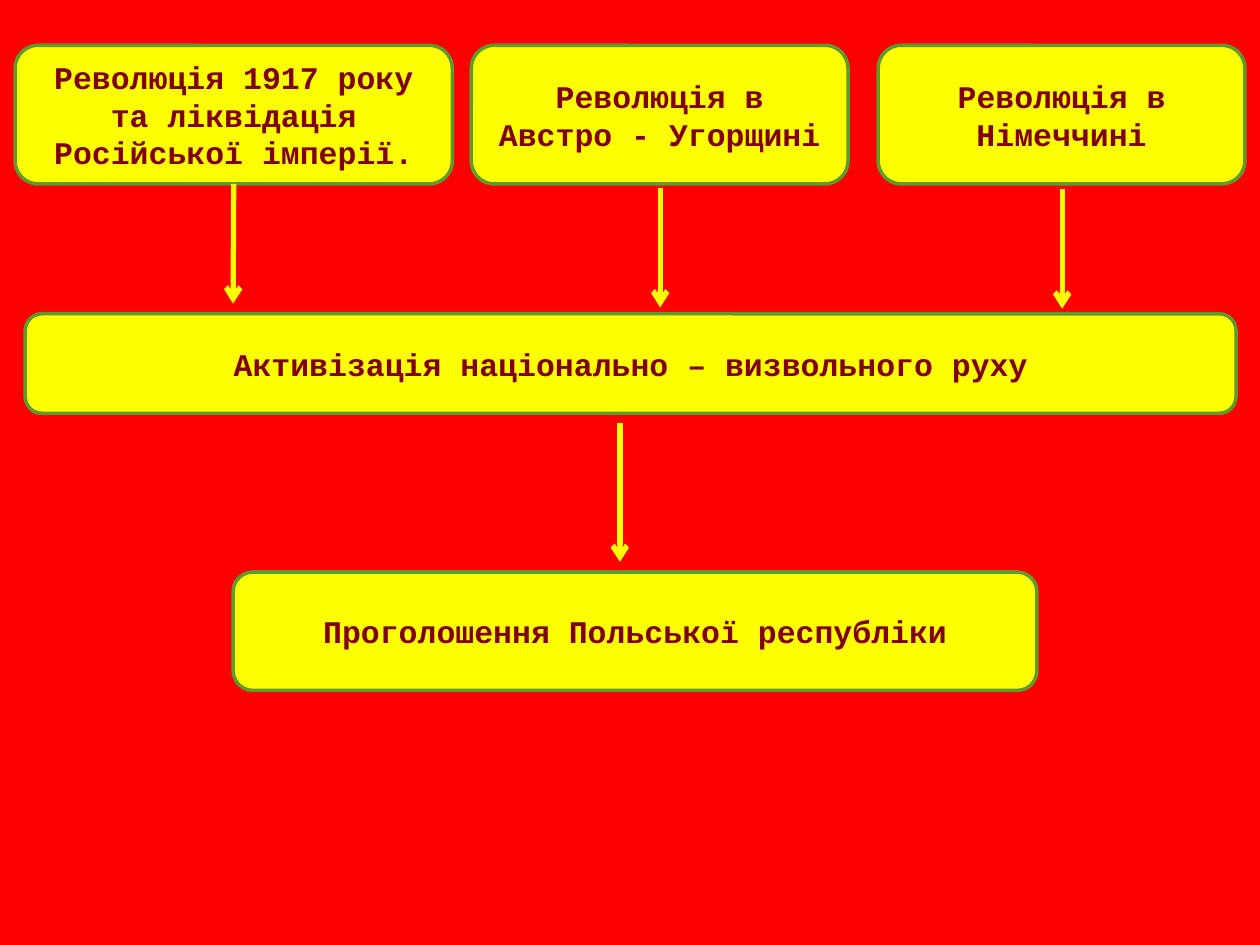
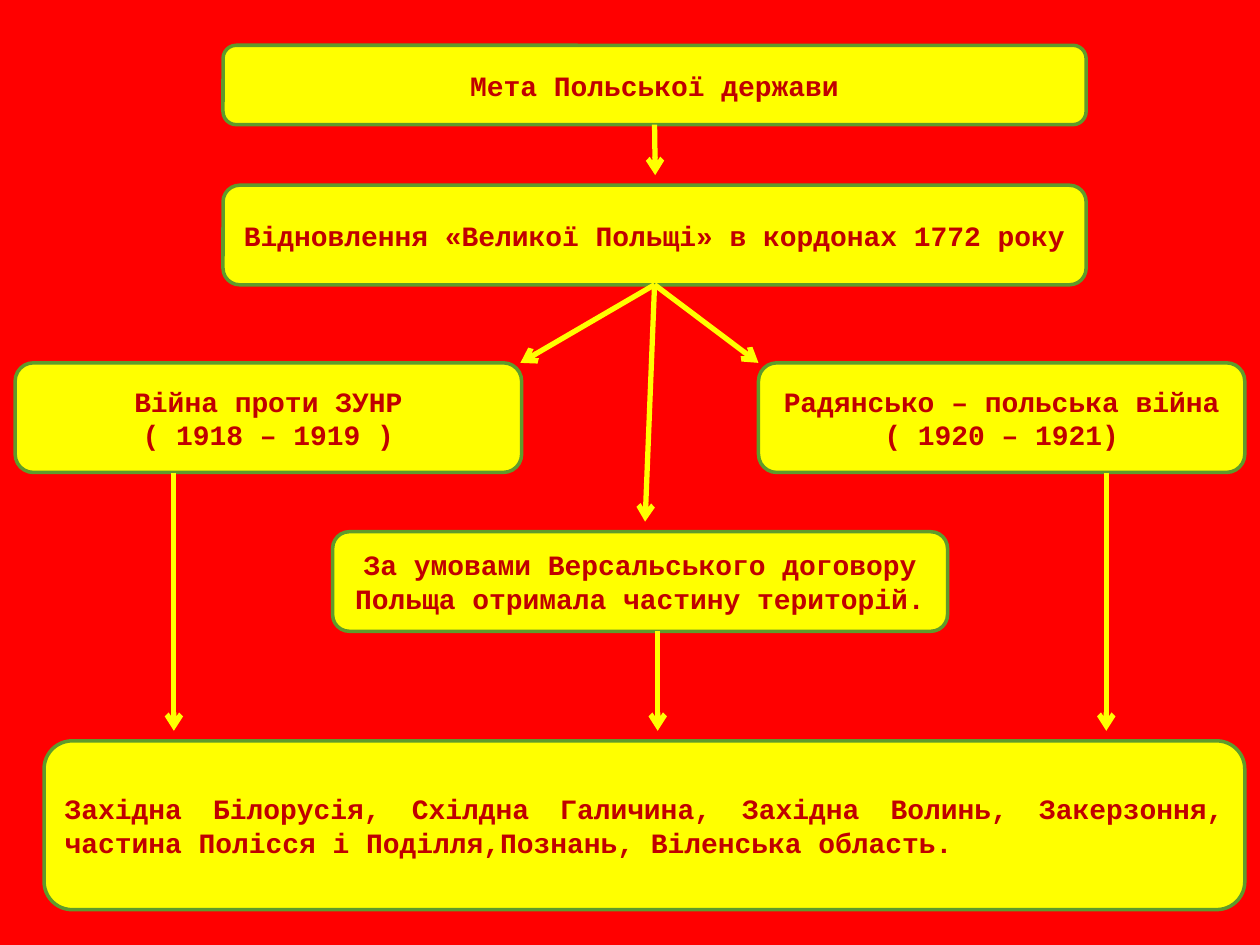
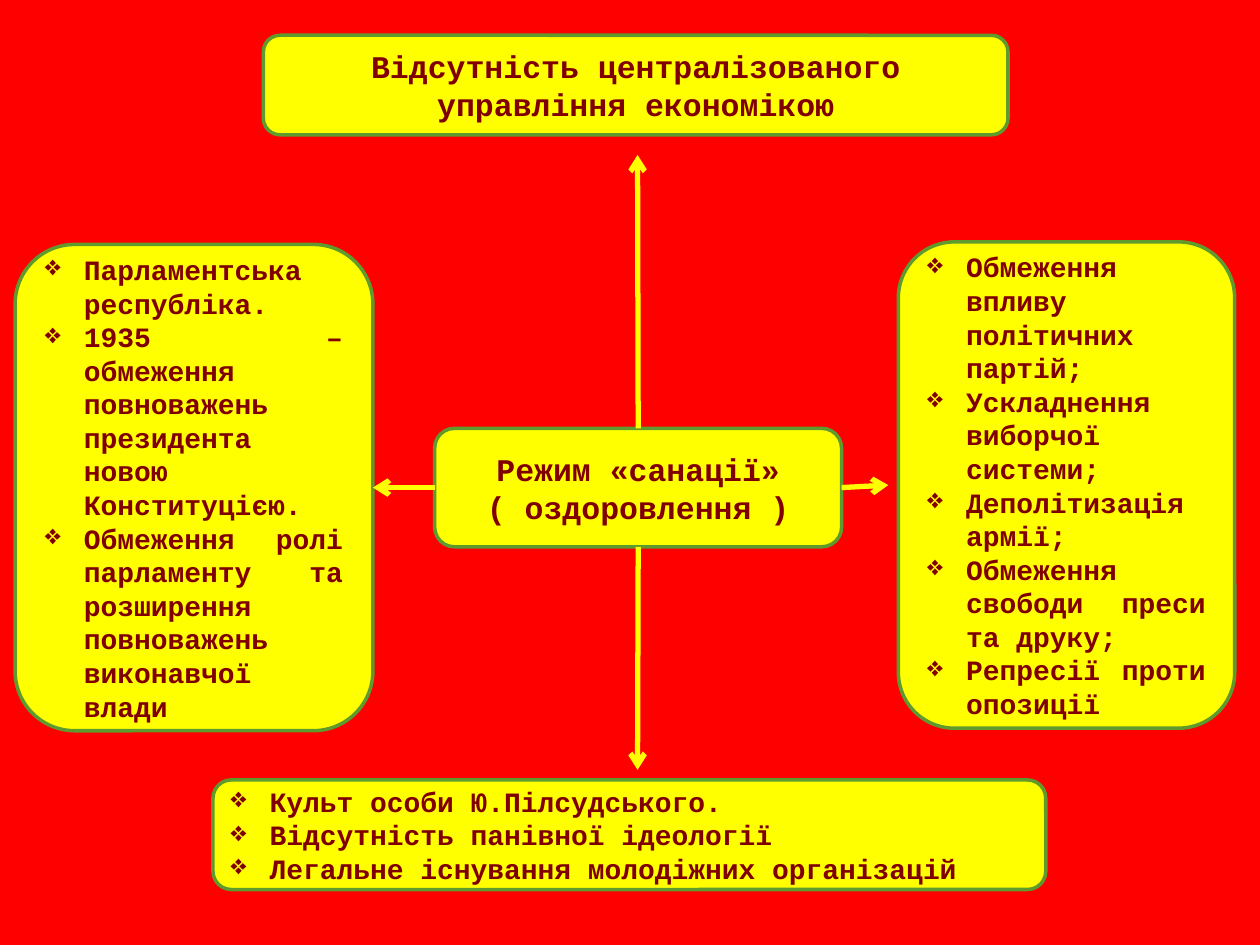
import pptx
import pptx.util
import pptx.dml.color
import pptx.enum.shapes
import pptx.enum.text
import pptx.oxml.ns
from lxml import etree

Inches = pptx.util.Inches
qn = pptx.oxml.ns.qn
ALIGN = pptx.enum.text.PP_ALIGN
COLORS = {name: pptx.dml.color.RGBColor.from_string(value) for name, value in {
    "red": "FF0000", "yellow": "FFFF00", "green": "5E9B2C",
    "maroon": "800000", "crimson": "C00000"}.items()}
BOTTOM, RIGHT, LEFT, TOP = 2, 3, 1, 0


def box(s, text, x, y, w, h, size=18, color="maroon", align=ALIGN.CENTER, bullet=None):
    """Yellow rounded box; each line of text is one paragraph."""
    sp = s.shapes.add_shape(pptx.enum.shapes.MSO_SHAPE.ROUNDED_RECTANGLE,
                            Inches(x), Inches(y), Inches(w), Inches(h))
    sp.shadow.inherit = False
    sp.fill.solid()
    sp.fill.fore_color.rgb = COLORS["yellow"]
    sp.line.color.rgb = COLORS["green"]
    sp.line.width = pptx.util.Pt(2)
    tf = sp.text_frame
    tf.word_wrap = True
    tf.vertical_anchor = pptx.enum.text.MSO_ANCHOR.MIDDLE
    for i, line in enumerate(text.split("\n")):
        p = tf.add_paragraph() if i else tf.paragraphs[0]
        p.alignment = align
        if bullet:
            pPr = p._p.get_or_add_pPr()
            pPr.set("marL", str(Inches(0.31)))
            pPr.set("indent", str(-Inches(0.31)))
            etree.SubElement(pPr, qn("a:buChar")).set("char", bullet)
        r = p.add_run()
        r.text = line
        r.font.name = "Courier New"
        r.font.size = pptx.util.Pt(size)
        r.font.bold = True
        r.font.color.rgb = COLORS[color]
    return sp


def arrow(s, x1, y1, x2, y2, begin=None, end=None):
    """Yellow arrow; begin and end are optional (shape, side) joints."""
    c = s.shapes.add_connector(pptx.enum.shapes.MSO_CONNECTOR.STRAIGHT,
                               Inches(x1), Inches(y1), Inches(x2), Inches(y2))
    if begin:
        c.begin_connect(*begin)
    if end:
        c.end_connect(*end)
    c.line.color.rgb = COLORS["yellow"]
    c.line.width = pptx.util.Pt(3)
    etree.SubElement(c.line._get_or_add_ln(), qn("a:tailEnd")).set("type", "arrow")
    etree.SubElement(c._element.spPr, qn("a:effectLst"))


prs = pptx.Presentation()
prs.slide_width, prs.slide_height = Inches(10), Inches(7.5)
blank = prs.slide_layouts[6]

# Shared red background
bg = prs.slide_master.background.fill
bg.solid()
bg.fore_color.rgb = COLORS["red"]

# Slide 1: causes, movement, republic
s = prs.slides.add_slide(blank)
russia = box(s, "Революція 1917 року та ліквідація Російської імперії.", 0.12, 0.36, 3.47, 1.1)
box(s, "Революція в Австро - Угорщині", 3.74, 0.36, 2.99, 1.1)
box(s, "Революція в Німеччині", 6.97, 0.36, 2.91, 1.1)
box(s, "Активізація національно – визвольного руху", 0.2, 2.49, 9.61, 0.79)
box(s, "Проголошення Польської республіки", 1.85, 4.54, 6.38, 0.94)
arrow(s, 1.85, 1.47, 1.85, 2.41, begin=(russia, BOTTOM))
for x, y1, y2 in [(5.24, 1.49, 2.44), (8.43, 1.5, 2.45), (4.92, 3.36, 4.46)]:
    arrow(s, x, y1, x, y2)

# Slide 2: aim of the state and its outcome
s = prs.slides.add_slide(blank)
style = {"size": 16, "color": "crimson"}
aim = box(s, "Мета Польської держави", 1.77, 0.36, 6.85, 0.63, **style)
greater = box(s, "Відновлення «Великої Польщі» в кордонах 1772 року",
              1.77, 1.47, 6.85, 0.79, **style)
box(s, "Війна проти ЗУНР\n( 1918 – 1919 )", 0.12, 2.88, 4.02, 0.87, **style)
box(s, "Радянсько – польська війна ( 1920 – 1921)", 6.02, 2.88, 3.86, 0.87, **style)
box(s, "За умовами Версальського договору Польща отримала частину територій.",
    2.64, 4.22, 4.88, 0.79, **style)
box(s, "Західна Білорусія, Схілдна Галичина, Західна Волинь, Закерзоння, "
       "частина Полісся і Поділля,Познань, Віленська область.",
    0.35, 5.88, 9.53, 1.34, align=ALIGN.JUSTIFY, **style)
arrow(s, 5.2, 0.99, 5.2, 1.39, begin=(aim, BOTTOM))
for x, y in [(4.13, 2.88), (6.02, 2.88), (5.12, 4.14)]:
    arrow(s, 5.2, 2.25, x, y, begin=(greater, BOTTOM))
for x, y in [(1.38, 3.75), (8.78, 3.75), (5.22, 5.01)]:
    arrow(s, x, y, x, 5.8)

# Slide 3: the regime and its features
s = prs.slides.add_slide(blank)
style = {"size": 16, "align": ALIGN.JUSTIFY, "bullet": "❖"}
regime = box(s, "Режим «санації»\n( оздоровлення )", 3.45, 3.4, 3.23, 0.94)
box(s, "Відсутність централізованого управління економікою", 2.09, 0.28, 5.91, 0.79)
power = box(s, "Парламентська республіка.\n"
               "1935 – обмеження повноважень президента новою Конституцією.\n"
               "Обмеження ролі парламенту та розширення повноважень виконавчої влади",
            0.12, 1.94, 2.84, 3.86, **style)
box(s, "Обмеження впливу політичних партій;\n"
       "Ускладнення виборчої системи;\n"
       "Деполітизація армії;\n"
       "Обмеження свободи преси та друку;\n"
       "Репресії проти опозиції",
    7.13, 1.92, 2.67, 3.86, **style)
box(s, "Культ особи Ю.Пілсудського.\n"
       "Відсутність панівної ідеології\n"
       "Легальне існування молодіжних організацій",
    1.69, 6.19, 6.61, 0.87, **style)
arrow(s, 5.06, 3.4, 5.06, 1.23, begin=(regime, TOP))
arrow(s, 5.06, 4.34, 5.06, 6.11, begin=(regime, BOTTOM))
arrow(s, 6.68, 3.87, 7.05, 3.85, begin=(regime, RIGHT))
arrow(s, 3.45, 3.87, 2.95, 3.87, begin=(regime, LEFT), end=(power, RIGHT))

prs.save("out.pptx")
